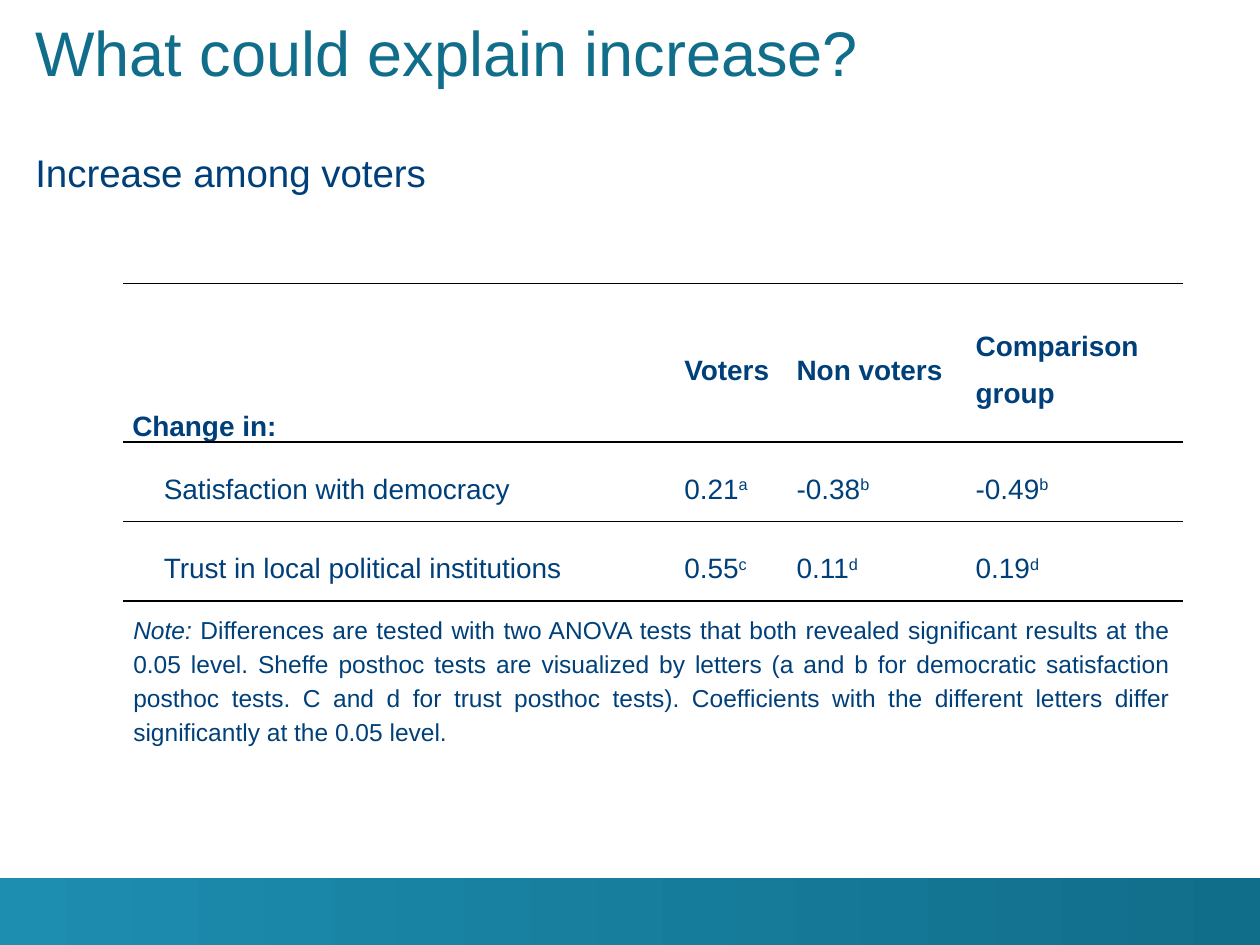
import pptx
import pptx.util
import pptx.dml.color
import pptx.enum.shapes
import pptx.enum.text
from lxml import etree

COLORS = {"title": "116E8A", "text": "00407A", "rule": "000000",
          "band_start": "1D8DB0", "band_end": "116E8A"}
FONT = "Arial"
COLS, ROWS = 100, 75
SLIDE_W, SLIDE_H = pptx.util.Inches(10), pptx.util.Inches(7.5)
ALIGN = pptx.enum.text.PP_ALIGN
ANCHOR = pptx.enum.text.MSO_ANCHOR
MARGINS = ("margin_left", "margin_top", "margin_right", "margin_bottom")

HEADERS = ["Change in:", "Voters", "Non voters", "Comparison group"]
CHANGES = [
    ("Satisfaction with democracy", ("0.21", "a"), ("-0.38", "b"), ("-0.49", "b")),
    ("Trust in local political institutions", ("0.55", "c"), ("0.11", "d"), ("0.19", "d")),
]
COL_SHARES = [0.521, 0.106, 0.169, 0.204]
ROW_SHARES = [0.5, 0.25, 0.25]
NOTE = ("Differences are tested with two ANOVA tests that both revealed significant "
        "results at the 0.05 level. Sheffe posthoc tests are visualized by letters "
        "(a and b for democratic satisfaction posthoc tests. C and d for trust posthoc "
        "tests). Coefficients with the different letters differ significantly at the "
        "0.05 level.")


def grid(col, row, width, height):
    """Turn grid columns and rows into a box in slide lengths."""
    cw, rh = SLIDE_W / COLS, SLIDE_H / ROWS
    return [round(v) for v in (col * cw, row * rh, width * cw, height * rh)]


def rgb(name):
    return pptx.dml.color.RGBColor.from_string(COLORS[name])


def set_all(obj, values):
    for name, value in values.items():
        setattr(obj, name, value)


def add_run(p, text, size, color="text", **values):
    r = p.add_run()
    r.text = text
    set_all(r.font, {"name": FONT, "size": pptx.util.Pt(size), **values})
    r.font.color.rgb = rgb(color)
    return r


def add_text(s, box, anchor=ANCHOR.TOP, inset=(0, 0)):
    """Add a wrapping text box and return its first paragraph."""
    tf = s.shapes.add_textbox(*box).text_frame
    insets = [pptx.util.Inches(v) for v in inset * 2]
    set_all(tf, {"word_wrap": True, "vertical_anchor": anchor,
                 **dict(zip(MARGINS, insets))})
    return tf.paragraphs[0]


def add_band(s, box):
    sp = s.shapes.add_shape(pptx.enum.shapes.MSO_SHAPE.RECTANGLE, *box)
    sp.shadow.inherit = False
    sp.line.fill.background()
    sp.fill.gradient()
    sp.fill.gradient_angle = 0
    for stop, name in zip(sp.fill.gradient_stops, ("band_start", "band_end")):
        stop.color.rgb = rgb(name)


def add_title(s, box):
    add_run(add_text(s, box, ANCHOR.BOTTOM), "What could explain increase?", 36, "title")


def add_subtitle(s, box):
    add_run(add_text(s, box), "Increase among voters", 22)


def rule_cell(cell):
    """Draw rules above and below a cell and none at its sides."""
    tc_pr = cell._tc.get_or_add_tcPr()
    ns = pptx.oxml.ns.qn
    for i, side in enumerate(("lnL", "lnR", "lnT", "lnB")):
        ln = etree.Element(ns(f"a:{side}"), w=str(pptx.util.Pt(1)))
        if side in ("lnL", "lnR"):
            etree.SubElement(ln, ns("a:noFill"))
        else:
            fill = etree.SubElement(ln, ns("a:solidFill"))
            etree.SubElement(fill, ns("a:srgbClr"), val=COLORS["rule"])
        tc_pr.insert(i, ln)


def fill_cell(cell, text, letter="", bold=False, anchor=ANCHOR.MIDDLE,
              align=ALIGN.JUSTIFY, left=0.07):
    insets = [pptx.util.Inches(v) for v in (left, 0, 0.07, 0)]
    set_all(cell, {"vertical_anchor": anchor, **dict(zip(MARGINS, insets))})
    cell.fill.background()
    rule_cell(cell)
    p = cell.text_frame.paragraphs[0]
    set_all(p, {"alignment": align, "line_spacing": 1.5})
    add_run(p, text, 16, bold=bold)
    if letter:
        r = add_run(p, letter, 16, bold=bold)
        r.font._element.set("baseline", "30000")


def add_change_table(s, box):
    left, top, width, height = box
    table = s.shapes.add_table(len(CHANGES) + 1, len(HEADERS), *box).table
    set_all(table, {"first_row": False, "horz_banding": False})
    for col, share in zip(table.columns, COL_SHARES):
        col.width = round(width * share)
    for row, share in zip(table.rows, ROW_SHARES):
        row.height = round(height * share)

    fill_cell(table.cell(0, 0), HEADERS[0], bold=True, anchor=ANCHOR.BOTTOM,
              align=ALIGN.LEFT)
    for j, header in enumerate(HEADERS[1:], 1):
        fill_cell(table.cell(0, j), header, bold=True)
    for i, (label, *values) in enumerate(CHANGES, 1):
        fill_cell(table.cell(i, 0), label, left=0.32)
        for j, (value, letter) in enumerate(values, 1):
            fill_cell(table.cell(i, j), value, letter)


def add_note(s, box):
    p = add_text(s, box, inset=(0.1, 0.05))
    set_all(p, {"alignment": ALIGN.JUSTIFY, "line_spacing": 1.15})
    add_run(p, "Note: ", 14, italic=True)
    add_run(p, NOTE, 14)


def main():
    prs = pptx.Presentation()
    set_all(prs, {"slide_width": SLIDE_W, "slide_height": SLIDE_H})
    s = prs.slides.add_slide(prs.slide_layouts[6])
    add_band(s, grid(0, 69.7, COLS, 5.3))
    add_title(s, grid(2.8, -2.7, 91.1, 9.8))
    add_subtitle(s, grid(2.8, 11.8, 92.9, 5))
    add_change_table(s, grid(9.8, 22.5, 84.1, 25.2))
    add_note(s, grid(9.6, 48, 84.3, 15.4))
    prs.save("out.pptx")


if __name__ == "__main__":
    main()
